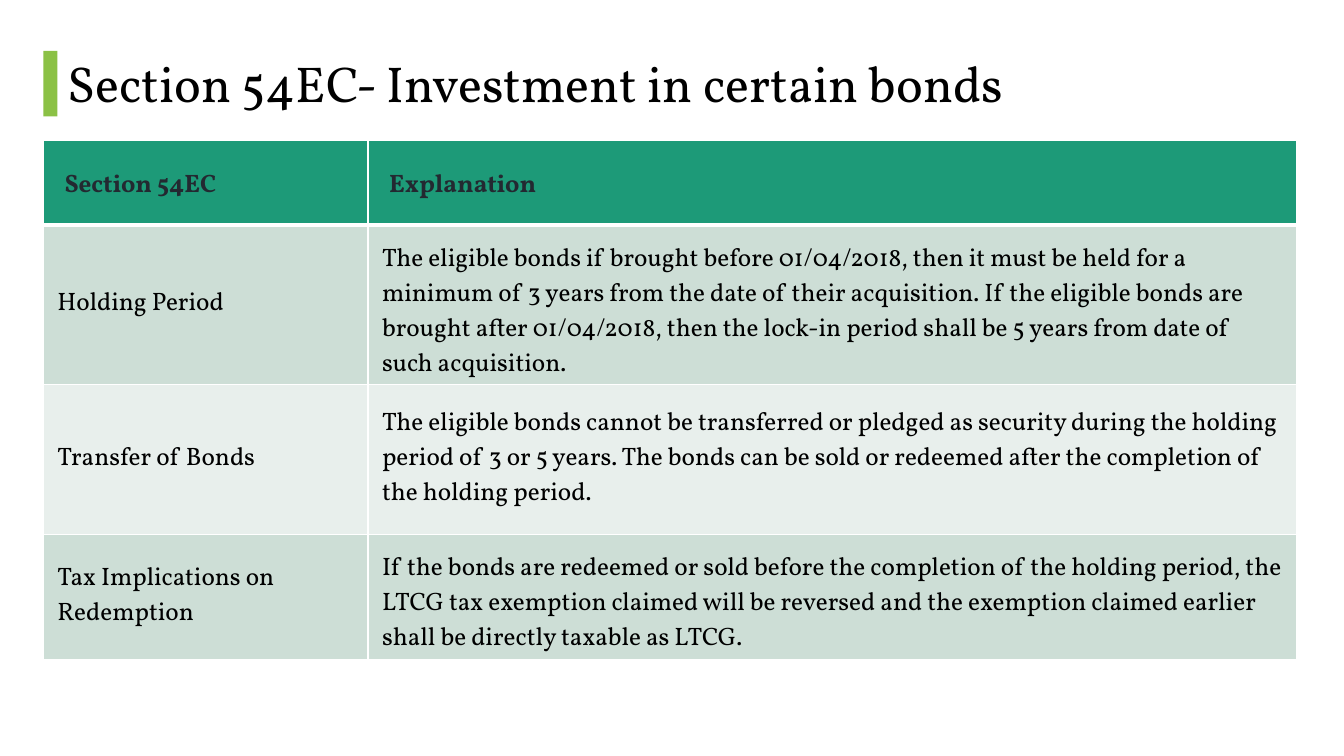
from lxml import etree
from pptx import Presentation
from pptx import util as u
from pptx.dml.color import RGBColor
from pptx.enum import shapes, text
from pptx.oxml import ns

FONT = "Vollkorn"
BLACK = RGBColor(0x00, 0x00, 0x00)
INK = RGBColor(0x23, 0x29, 0x31)
LIME = RGBColor(0x8B, 0xC1, 0x45)
GREEN = RGBColor(0x1D, 0x9A, 0x78)
SAGE = RGBColor(0xCD, 0xDE, 0xD6)
MIST = RGBColor(0xE8, 0xEF, 0xEC)
BORDER = "FFFFFF"

MARGIN = 0.43
COLUMNS = (3.22, 9.21)
ROW_HEIGHTS = (0.64, 1.58, 1.49, 1.12)
ROWS = (
    ("Section 54EC", "Explanation"),
    ("Holding Period",
     "The eligible bonds if brought before 01/04/2018, then it must be held for a "
     "minimum of 3 years from the date of their acquisition. If the eligible bonds are "
     "brought after 01/04/2018, then the lock-in period shall be 5 years from date of "
     "such acquisition."),
    ("Transfer of Bonds",
     "The eligible bonds cannot be transferred or pledged as security during the holding "
     "period of 3 or 5 years. The bonds can be sold or redeemed after the completion of "
     "the holding period."),
    ("Tax Implications on Redemption",
     "If the bonds are redeemed or sold before the completion of the holding period, the "
     "LTCG tax exemption claimed will be reversed and the exemption claimed earlier "
     "shall be directly taxable as LTCG."),
)


def style(para, size, color, bold=False):
    para.font.name = FONT
    para.font.size = u.Pt(size)
    para.font.bold = bold
    para.font.color.rgb = color


def set_borders(cell, bottom):
    """Draw white lines on all four sides; they precede the fill in the XML."""
    props = cell._tc.get_or_add_tcPr()
    widths = {"a:lnL": 1, "a:lnR": 1, "a:lnT": 1, "a:lnB": bottom}
    for place, (tag, width) in enumerate(widths.items()):
        line = etree.Element(ns.qn(tag), w=str(u.Pt(width)))
        fill = etree.SubElement(line, ns.qn("a:solidFill"))
        etree.SubElement(fill, ns.qn("a:srgbClr"), val=BORDER)
        props.insert(place, line)


def add_heading(page, left, top, width, height):
    # Accent bar, centred on the title
    bar_width, bar_height = 0.14, 0.65
    bar = page.shapes.add_shape(
        shapes.MSO_SHAPE.RECTANGLE, u.Inches(left),
        u.Inches(top + (height - bar_height) / 2 - 0.03),
        u.Inches(bar_width), u.Inches(bar_height))
    bar.shadow.inherit = False
    bar.fill.solid()
    bar.fill.fore_color.rgb = LIME
    bar.line.fill.background()

    # Title
    box = page.shapes.add_textbox(
        u.Inches(left + bar_width), u.Inches(top),
        u.Inches(width - bar_width), u.Inches(height))
    frame = box.text_frame
    frame.word_wrap = True
    frame.vertical_anchor = text.MSO_ANCHOR.MIDDLE
    para = frame.paragraphs[0]
    para.text = "Section 54EC- Investment in certain bonds"
    para.line_spacing = 0.9
    style(para, 36, BLACK)


def fill_cell(cell, words, row):
    header = row == 0
    cell.text = words
    cell.vertical_anchor = text.MSO_ANCHOR.MIDDLE
    cell.margin_left = cell.margin_right = u.Inches(0.21 if header else 0.14)
    cell.margin_top = cell.margin_bottom = u.Inches(0.26 if header else 0.17)
    cell.fill.solid()
    cell.fill.fore_color.rgb = GREEN if header else SAGE if row % 2 else MIST
    set_borders(cell, bottom=3 if header else 1)
    para = cell.text_frame.paragraphs[0]
    style(para, 18, INK if header else BLACK, bold=header)
    if header:
        para.line_spacing = 1.07
        para.space_after = u.Pt(8)


def add_bond_table(page, left, top, width, height):
    table = page.shapes.add_table(
        len(ROWS), len(COLUMNS), u.Inches(left), u.Inches(top),
        u.Inches(width), u.Inches(height)).table
    for column, share in zip(table.columns, COLUMNS):
        column.width = u.Inches(width * share / sum(COLUMNS))
    for row, row_height in enumerate(ROW_HEIGHTS):
        table.rows[row].height = u.Inches(height * row_height / sum(ROW_HEIGHTS))
        for column, words in enumerate(ROWS[row]):
            fill_cell(table.cell(row, column), words, row)


def main():
    deck = Presentation()
    deck.slide_width, deck.slide_height = u.Inches(13.33), u.Inches(7.5)
    page = deck.slides.add_slide(deck.slide_layouts[6])
    add_heading(page, MARGIN, 0.24, 12.07, 1.24)
    add_bond_table(page, MARGIN, 1.39, sum(COLUMNS), sum(ROW_HEIGHTS))
    deck.save("out.pptx")


if __name__ == "__main__":
    main()
